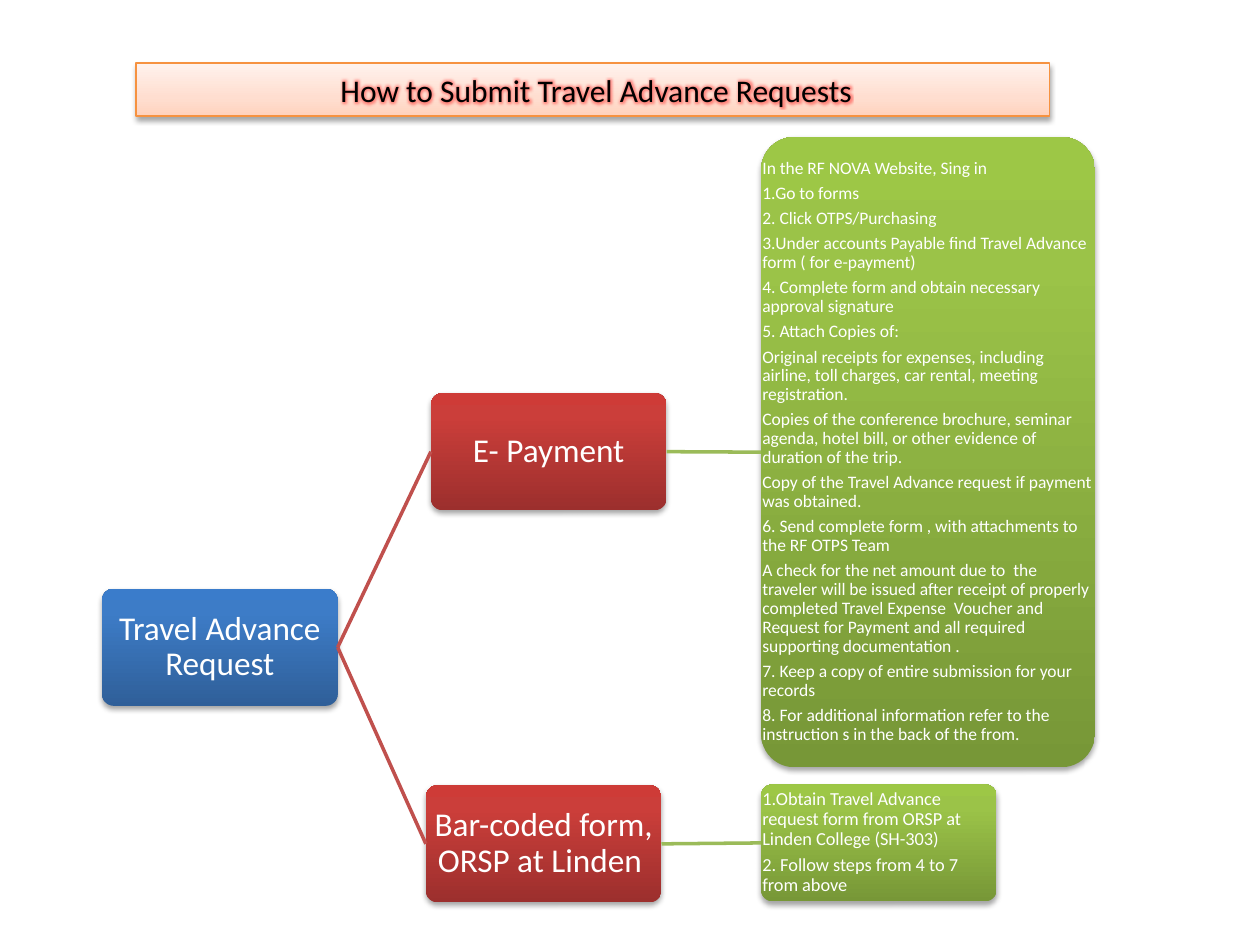
from collections import namedtuple
from copy import deepcopy

from lxml import etree
from pptx import Presentation
from pptx.dml.color import RGBColor
from pptx.enum.shapes import MSO_CONNECTOR, MSO_SHAPE
from pptx.enum.text import MSO_ANCHOR, PP_ALIGN
from pptx.oxml.ns import qn
from pptx.util import Emu, Inches, Pt

RECTANGLE, ROUNDED = MSO_SHAPE.RECTANGLE, MSO_SHAPE.ROUNDED_RECTANGLE
STRAIGHT = MSO_CONNECTOR.STRAIGHT
LEFT, CENTER, MIDDLE = PP_ALIGN.LEFT, PP_ALIGN.CENTER, MSO_ANCHOR.MIDDLE

WIDTH, HEIGHT = Inches(10), Inches(7.5)
FONT = "Calibri"
CORNER = 0.1
CORNER_INSET = 0.29 * CORNER  # share of the short side taken by a rounded corner
MARGIN = Inches(0.01)

# Gradient stops run from the bottom of a shape to its top.
BLUE = [(0, "2F5F99"), (0.8, "3D7CC7"), (1, "3A7CCB")]
RED = [(0, "9C2F2D"), (0.8, "CB3E3A"), (1, "CE3B37")]
GREEN = [(0, "779737"), (0.8, "9BC348"), (1, "9DC746")]
PEACH = [(0, "FFD2BD"), (0.35, "FFDED0"), (1, "FFF2ED")]
RED_LINE, GREEN_LINE = "C0504D", "9BBB59"

# Boxes are given in percent of the slide's width and height.
Box = namedtuple("Box", "left top width height")
NODE_WIDTH, NODE_HEIGHT = 18.7, 12.4
DETAIL_LEFT = 60.4
TITLE_BOX = Box(10.8, 6.67, 72.5, 5.6)
ROOT_BOX = Box(8.1, 62.3, NODE_WIDTH, NODE_HEIGHT)
PAYMENT_BOX = Box(34.2, 41.6, NODE_WIDTH, NODE_HEIGHT)
PAPER_BOX = Box(33.8, 83.1, NODE_WIDTH, NODE_HEIGHT)
PAYMENT_STEPS_BOX = Box(DETAIL_LEFT, 14.5, 26.5, 66.7)
PAPER_STEPS_BOX = Box(DETAIL_LEFT, 83, NODE_WIDTH, NODE_HEIGHT)

PAYMENT_STEPS = [
    "In the RF NOVA Website, Sing in",
    "1.Go to forms",
    "2. Click OTPS/Purchasing",
    "3.Under accounts Payable find Travel Advance form ( for e-payment)",
    "4. Complete form and obtain necessary approval signature",
    "5. Attach Copies of:",
    "Original receipts for expenses, including airline, toll charges, car rental, "
    "meeting registration.",
    "Copies of the conference brochure, seminar agenda, hotel bill, or other "
    "evidence of duration of the trip.",
    "Copy of the Travel Advance request if payment was obtained.",
    "6. Send complete form , with attachments to the RF OTPS Team",
    "A check for the net amount due to  the traveler will be issued after receipt "
    "of properly completed Travel Expense  Voucher and Request for Payment and all "
    "required supporting documentation .",
    "7. Keep a copy of entire submission for your records",
    "8. For additional information refer to the instruction s in the back of the from.",
]
PAPER_STEPS = [
    "1.Obtain Travel Advance request form from ORSP at Linden College (SH-303)",
    "2. Follow steps from 4 to 7 from above",
]


def color(value):
    return RGBColor.from_string(value)


def across(percent):
    return Emu(round(WIDTH * percent / 100))


def down(percent):
    return Emu(round(HEIGHT * percent / 100))


def set_values(target, values):
    for name, value in values.items():
        setattr(target, name, value)


def add_effect(parent, kind, rgb, alpha, **lengths):
    effect = etree.SubElement(parent, qn(f"a:{kind}"))
    for name, value in lengths.items():
        effect.set(name, str(int(value)))
    tint = etree.SubElement(effect, qn("a:srgbClr"), val=rgb)
    etree.SubElement(tint, qn("a:alpha"), val=str(alpha * 1000))


def fill_gradient(shape, stops):
    shape.fill.gradient()
    shape.fill.gradient_angle = 90
    first = shape._element.spPr.find(f".//{qn('a:gs')}")
    first.addnext(deepcopy(first))
    for stop, (position, rgb) in zip(shape.fill.gradient_stops, stops):
        stop.color.rgb = color(rgb)
        stop.position = position


def add_panel(slide, kind, box, stops):
    """Add a gradient shape with a soft shadow below it."""
    shape = slide.shapes.add_shape(
        kind, across(box.left), down(box.top), across(box.width), down(box.height))
    fill_gradient(shape, stops)
    shape.line.fill.background()
    shape.shadow.inherit = False
    effects = shape._element.spPr.find(qn("a:effectLst"))
    add_effect(effects, "outerShdw", "000000", 35, blurRad=Pt(3.1), dist=Pt(1.8),
               dir=90 * 60000, rotWithShape=0)
    return shape


def write(shape, lines, size, rgb, alignment, **spacing):
    frame = shape.text_frame
    set_values(frame, {"word_wrap": True, "vertical_anchor": MIDDLE})
    frame.text = "\n".join(lines)
    for paragraph in frame.paragraphs:
        set_values(paragraph, {"alignment": alignment, **spacing})
        for run in paragraph.runs:
            set_values(run.font, {"size": Pt(size), "name": FONT})
            run.font.color.rgb = color(rgb)


def add_node(slide, box, lines, stops, size=19, alignment=CENTER):
    shape = add_panel(slide, ROUNDED, box, stops)
    shape.adjustments[0] = CORNER
    # Let the text use the whole box, corners included.
    inset = MARGIN - round(CORNER_INSET * min(shape.width, shape.height))
    sides = ("left", "top", "right", "bottom")
    set_values(shape.text_frame, {f"margin_{side}": inset for side in sides})
    write(shape, lines, size, "FFFFFF", alignment,
          line_spacing=0.9, space_after=Pt(0.35 * size))
    return shape


def add_title(slide, box, text):
    shape = add_panel(slide, RECTANGLE, box, PEACH)
    shape.line.color.rgb = color("F69240")
    shape.line.width = Pt(0.75)
    write(shape, [text], 18, "000000", CENTER)
    properties = shape.text_frame.paragraphs[0].runs[0].font._element
    effects = etree.Element(qn("a:effectLst"))
    properties.find(qn("a:solidFill")).addnext(effects)
    add_effect(effects, "glow", "FF0000", 40, rad=Pt(5))


def add_link(slide, start, end, rgb):
    """Join the right edge of one node to the left edge of another."""
    connector = slide.shapes.add_connector(STRAIGHT, 0, 0, 0, 0)
    connector.begin_connect(start, 3)
    connector.end_connect(end, 1)
    connector.line.color.rgb = color(rgb)
    connector.line.width = Pt(2)
    etree.SubElement(connector._element.spPr, qn("a:effectLst"))


def add_tree(slide):
    root = add_node(slide, ROOT_BOX, ["Travel Advance Request"], BLUE)
    branches = [
        (PAYMENT_BOX, "E- Payment", PAYMENT_STEPS_BOX, PAYMENT_STEPS, 10),
        (PAPER_BOX, "Bar-coded form, ORSP at Linden ", PAPER_STEPS_BOX, PAPER_STEPS, 10.5),
    ]
    for box, label, steps_box, steps, size in branches:
        branch = add_node(slide, box, [label], RED)
        detail = add_node(slide, steps_box, steps, GREEN, size, LEFT)
        add_link(slide, root, branch, RED_LINE)
        add_link(slide, branch, detail, GREEN_LINE)


def main():
    presentation = Presentation()
    set_values(presentation, {"slide_width": WIDTH, "slide_height": HEIGHT})
    slide = presentation.slides.add_slide(presentation.slide_layouts[6])
    add_tree(slide)
    add_title(slide, TITLE_BOX, " How to Submit Travel Advance Requests")
    presentation.save("out.pptx")


if __name__ == "__main__":
    main()
